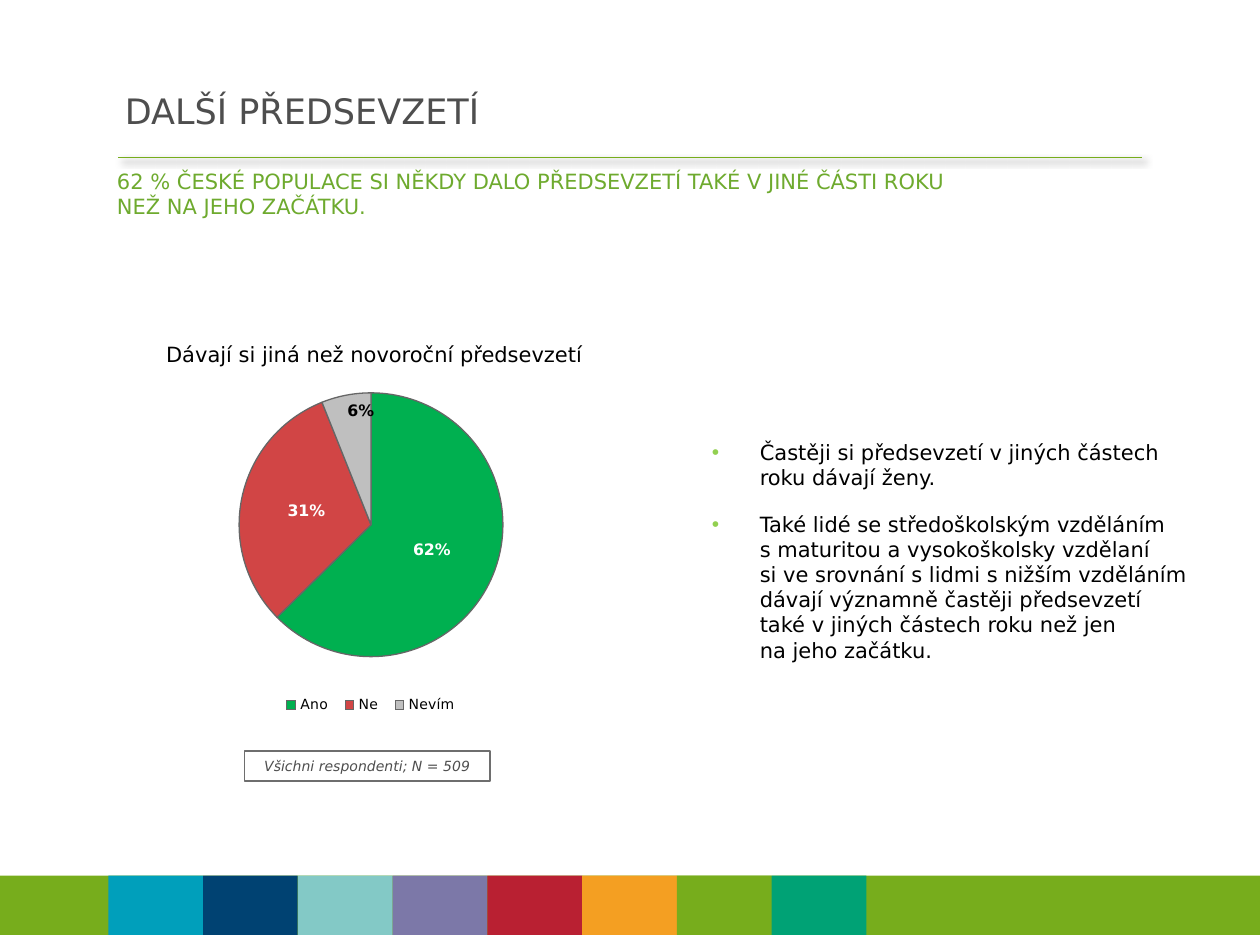
from lxml import etree
from pptx import Presentation
from pptx import util as u
from pptx.chart.data import CategoryChartData
from pptx.dml.color import RGBColor
from pptx.enum import chart as charts, shapes, text
from pptx.oxml import parse_xml
from pptx.oxml.ns import nsdecls, qn

FONT = "DejaVu Sans"
BLACK = RGBColor(0x00, 0x00, 0x00)
WHITE = RGBColor(0xFF, 0xFF, 0xFF)
DARK = RGBColor(0x4E, 0x4E, 0x4E)
FRAME = RGBColor(0x6E, 0x6E, 0x6E)
OUTLINE = RGBColor(0x66, 0x66, 0x66)
HEADLINE = RGBColor(0x6E, 0xAA, 0x2E)
GREEN = RGBColor(0x77, 0xAD, 0x1C)
BULLET = RGBColor(0x92, 0xD0, 0x50)
TILES = [RGBColor(0x00, 0x9F, 0xBB), RGBColor(0x00, 0x42, 0x72),
         RGBColor(0x83, 0xC9, 0xC6), RGBColor(0x7C, 0x78, 0xA8),
         RGBColor(0xB9, 0x20, 0x32), RGBColor(0xF4, 0x9F, 0x22),
         GREEN, RGBColor(0x00, 0xA2, 0x75)]
SLICES = [("Ano", 0.62, RGBColor(0x00, 0xB0, 0x50)),
          ("Ne", 0.31, RGBColor(0xD1, 0x45, 0x45)),
          ("Nevím", 0.06, RGBColor(0xBF, 0xBF, 0xBF))]
FINDINGS = [
    "Častěji si předsevzetí v jiných částech roku dávají ženy.",
    "Také lidé se středoškolským vzděláním \ns maturitou a vysokoškolsky vzdělaní \n"
    "si ve srovnání s lidmi s nižším vzděláním dávají významně častěji předsevzetí "
    "také v jiných částech roku než jen \nna jeho začátku.",
]


def inches(*lengths):
    """Convert lengths in inches to slide units."""
    return [u.Inches(length) for length in lengths]


def style_font(font, size, color):
    """Set typeface, size and colour of a font."""
    font.name, font.size = FONT, u.Pt(size)
    font.color.rgb = color


def write(para, words, size, color):
    """Add the words run by run, with a line break between lines."""
    for index, line in enumerate(words.split("\n")):
        if index:
            para.add_line_break()
        span = para.add_run()
        span.text = line
        style_font(span.font, size, color)


def place(box, left, top, width, height):
    """Move and size a placeholder."""
    box.left, box.top, box.width, box.height = inches(left, top, width, height)


def add_label(page, frame, words, color):
    """Add a wrapped text box with 12 point text."""
    box = page.shapes.add_textbox(*inches(*frame))
    box.text_frame.word_wrap = True
    write(box.text_frame.paragraphs[0], words, 12, color)


def add_rectangle(page, left, top, width, height):
    """Add a rectangle without shadow."""
    box = page.shapes.add_shape(shapes.MSO_SHAPE.RECTANGLE,
                                *inches(left, top, width, height))
    box.shadow.inherit = False
    return box


def add_tile(page, left, width, color):
    """Add one borderless colour field of the footer strip."""
    tile = add_rectangle(page, left, 6.95, width, 0.47)
    tile.fill.solid()
    tile.fill.fore_color.rgb = color
    tile.line.fill.background()


def add_strip(page):
    """Add the green footer strip with its row of colour tiles."""
    add_tile(page, 0, 10, GREEN)
    for column, color in enumerate(TILES):
        add_tile(page, 0.86 + column * 0.752, 0.752, color)


def add_rule(page):
    """Add the shadowed line under the title."""
    rule = page.shapes.add_connector(shapes.MSO_CONNECTOR.STRAIGHT,
                                     *inches(0.94, 1.25, 9.06, 1.25))
    rule.line.color.rgb, rule.line.width = GREEN, u.Pt(0.75)
    rule._element.spPr.append(parse_xml(
        f'<a:effectLst {nsdecls("a")}><a:outerShdw blurRad="{u.Pt(4)}" '
        f'dist="{u.Pt(3)}" dir="2700000" algn="tl" rotWithShape="0">'
        '<a:srgbClr val="000000"><a:alpha val="40000"/></a:srgbClr>'
        '</a:outerShdw></a:effectLst>'))


def set_title(page, words):
    """Fill the title placeholder."""
    title = page.shapes.title
    place(title, 0.89, 0.62, 8.87, 0.51)
    title.text_frame.vertical_anchor = text.MSO_ANCHOR.MIDDLE
    para = title.text_frame.paragraphs[0]
    para.alignment, para.space_after = text.PP_ALIGN.LEFT, u.Pt(3)
    write(para, words, 20, DARK)


def set_findings(page):
    """Fill the body placeholder with the bulleted findings."""
    body = page.placeholders[1]
    place(body, 5.55, 3.44, 4.02, 1.88)
    frame = body.text_frame
    for index, finding in enumerate(FINDINGS):
        para = frame.add_paragraph() if index else frame.paragraphs[0]
        props = para._p.get_or_add_pPr()
        props.set("marL", str(u.Inches(0.38)))
        props.set("indent", str(-u.Inches(0.38)))
        color = etree.SubElement(props, qn("a:buClr"))
        etree.SubElement(color, qn("a:srgbClr"), val=str(BULLET))
        etree.SubElement(props, qn("a:buChar"), char="•")
        para.space_before, para.space_after = u.Pt(6 if index else 0), u.Pt(6)
        write(para, finding, 12, BLACK)


def set_layout(part, after, left, top, width, height, inner=False):
    """Fix a chart part at shares of the chart's size."""
    for old in part.findall(qn("c:layout")):
        part.remove(old)
    target = '<c:layoutTarget val="inner"/>' if inner else ""
    sizes = "".join(f'<c:{tag} val="{share}"/>' for tag, share in
                    zip("xywh", (left, top, width, height)))
    layout = parse_xml(
        f'<c:layout {nsdecls("c")}><c:manualLayout>{target}<c:xMode val="edge"/>'
        f'<c:yMode val="edge"/>{sizes}</c:manualLayout></c:layout>')
    if after is None:
        part.insert(0, layout)
    else:
        part.find(qn(after)).addnext(layout)


def add_pie(page):
    """Add the pie chart of answers with labels and legend."""
    names, shares, colors = zip(*SLICES)
    data = CategoryChartData(number_format="0%")
    data.categories = names
    data.add_series("Series 1", shares)
    chart = page.shapes.add_chart(charts.XL_CHART_TYPE.PIE,
                                  *inches(1.41, 3, 3.07, 2.95), data).chart
    style_font(chart.font, 18, BLACK)
    chart.has_title = False
    chart.has_legend = True
    chart.legend.position = charts.XL_LEGEND_POSITION.BOTTOM
    chart.legend.include_in_layout = False
    style_font(chart.legend.font, 8, BLACK)
    plot = chart.plots[0]
    plot.vary_by_categories = True
    series = plot.series[0]
    for index, color in enumerate(colors):
        look = series.points[index].format
        look.fill.solid()
        look.fill.fore_color.rgb = color
        look.line.color.rgb, look.line.width = OUTLINE, u.Pt(0.75)
    labels = series.data_labels
    labels.show_value = True
    labels.number_format, labels.number_format_is_linked = "0%", False
    labels.position = charts.XL_LABEL_POSITION.CENTER
    style_font(labels.font, 9, WHITE)
    labels.font.bold = True
    small = series.points[2].data_label
    style_font(small.font, 9, BLACK)
    small.font.bold = True
    small.position = charts.XL_LABEL_POSITION.INSIDE_END
    set_layout(chart._chartSpace.chart.plotArea, None, 0.13, 0.04, 0.74, 0.71, True)
    set_layout(chart.legend._element, "c:legendPos", 0.25, 0.84, 0.5, 0.08)


def add_sample_note(page, words):
    """Add the framed note on the sample size."""
    note = add_rectangle(page, 1.94, 5.96, 1.95, 0.24)
    note.fill.background()
    note.line.color.rgb, note.line.width = FRAME, u.Pt(0.75)
    para = note.text_frame.paragraphs[0]
    para.alignment = text.PP_ALIGN.CENTER
    write(para, words, 8, DARK)
    para.runs[0].font.italic = True


def main():
    """Build and save the slide."""
    deck = Presentation()
    deck.slide_width, deck.slide_height = inches(10, 7.5)
    page = deck.slides.add_slide(deck.slide_layouts[1])
    add_rule(page)
    add_strip(page)
    set_title(page, "DALŠÍ PŘEDSEVZETÍ")
    add_label(page, (0.83, 1.29, 8.35, 0.55),
              "62 % ČESKÉ POPULACE SI NĚKDY DALO PŘEDSEVZETÍ TAKÉ V JINÉ ČÁSTI ROKU \n"
              "NEŽ NA JEHO ZAČÁTKU.", HEADLINE)
    add_pie(page)
    add_label(page, (1.22, 2.66, 3.68, 0.3),
              "Dávají si jiná než novoroční předsevzetí", BLACK)
    add_sample_note(page, "Všichni respondenti; N = 509")
    set_findings(page)
    deck.save("out.pptx")


if __name__ == "__main__":
    main()
